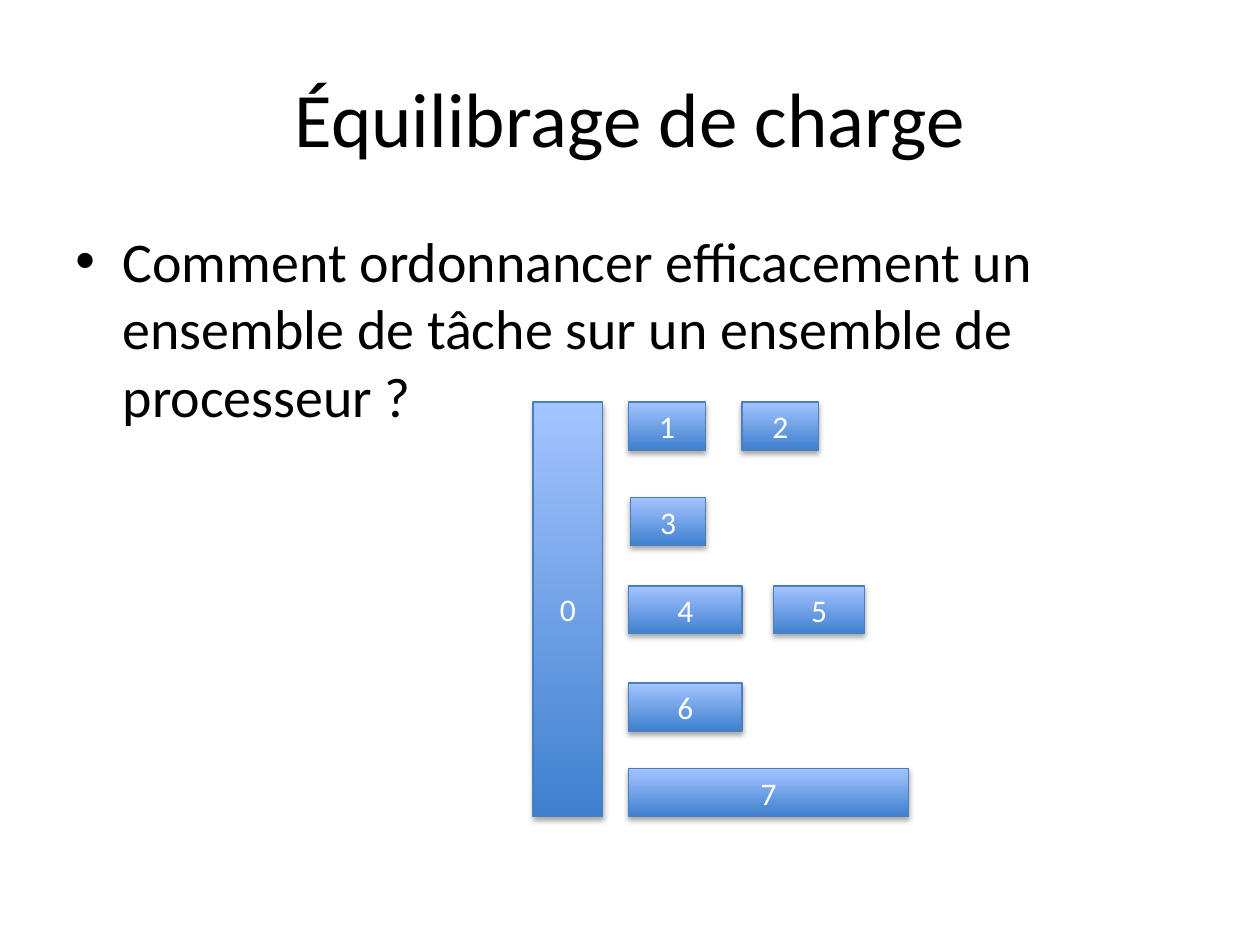
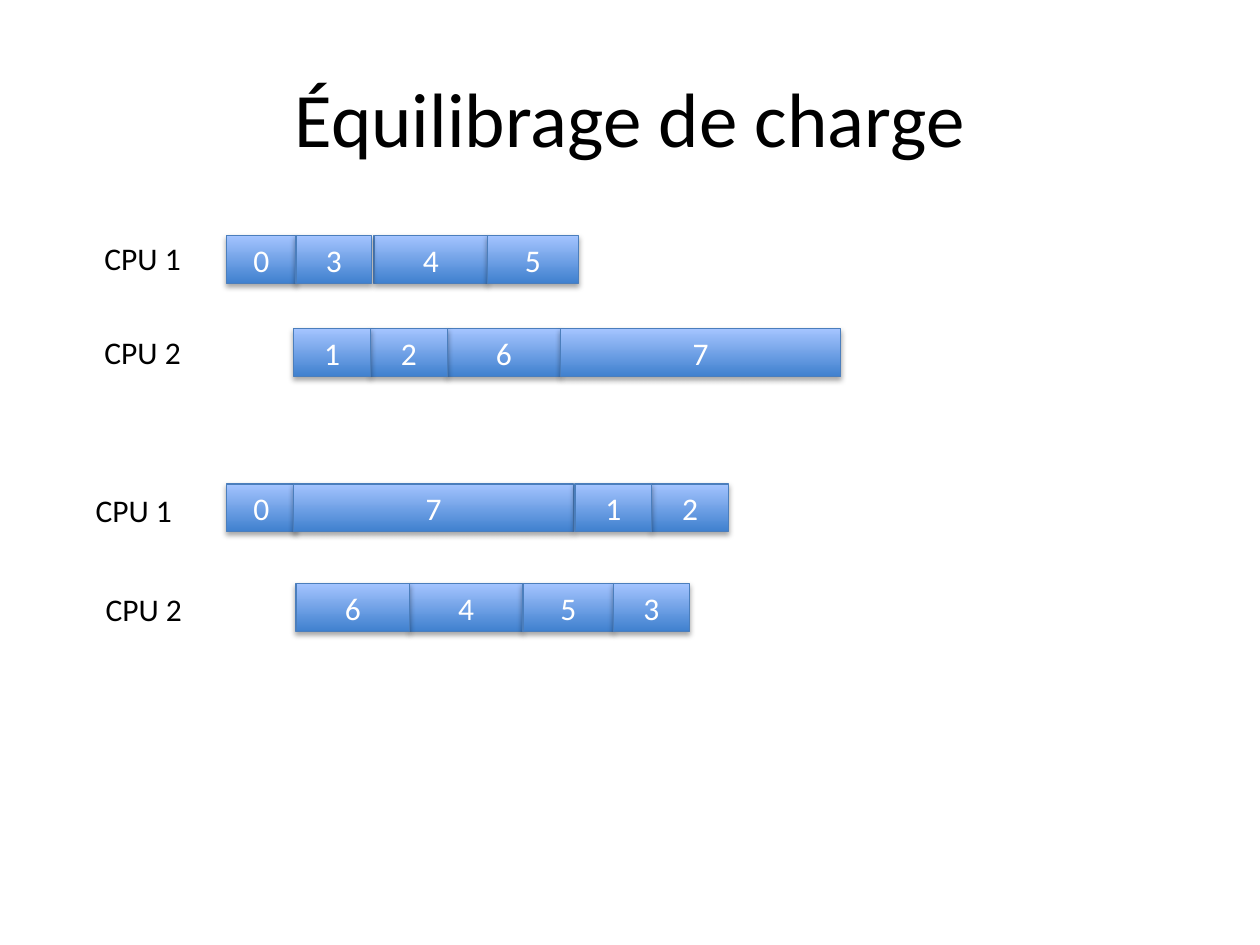
from lxml.etree import SubElement
from pptx import Presentation
from pptx.dml.color import RGBColor
from pptx.enum.shapes import MSO_SHAPE as Preset
from pptx.enum.text import MSO_ANCHOR as Anchor, MSO_AUTO_SIZE as AutoSize, PP_ALIGN as Align
from pptx.oxml.ns import qn
from pptx.util import Pt

FONT = "Calibri"
BLACK = RGBColor(0x00, 0x00, 0x00)
WHITE = RGBColor(0xFF, 0xFF, 0xFF)
TASK_DARK = RGBColor(0x3F, 0x80, 0xCE)
TASK_LIGHT = RGBColor(0xA4, 0xC4, 0xFF)
TASK_EDGE = RGBColor(0x4B, 0x7E, 0xBC)

TITLE_BOX = (36, 21.6, 648, 90)
QUESTION_BOX = (36, 126, 648, 117.36)
TASK_SET_ORIGIN = (304.6, 229.7)
TASK_HEIGHT = 27.4
LABEL_SIZE = (58.3, 29)
STACKING = "04652371"
DURATIONS = {"0": 39.6, "1": 43.9, "2": 43.9, "3": 43.2,
             "4": 64.8, "5": 51.9, "6": 64.8, "7": 160}
TASK_OFFSETS = {"0": (0, 0), "1": (54.7, 0), "2": (119.4, 0), "3": (55.6, 54.7),
                "4": (54.7, 105.1), "5": (137.5, 105.1), "6": (54.7, 160.6),
                "7": (54.7, 209.5)}

# Each lane: label, label origin, lane origin, tasks in order, gap before a task
LANES = [
    ("CPU 1", (52.6, 133.2), (129.6, 134.6), "0345", {"4": 1.4}),
    ("CPU 2", (52.6, 186.5), (167.8, 187.9), "1267", {}),
    ("CPU 1", (47.5, 277.2), (129.6, 276.5), "0712", {"7": -1.4, "1": 0.7}),
    ("CPU 2", (53.3, 333.4), (169.2, 333.4), "6453", {}),
]


def write(frame, text, size, color, align=Align.LEFT, anchor=Anchor.TOP):
    frame.text = text
    frame.vertical_anchor = anchor
    paragraph = frame.paragraphs[0]
    paragraph.alignment = align
    font = paragraph.runs[0].font
    font.name, font.size, font.color.rgb = FONT, Pt(size), color
    return paragraph


def add_text(slide, box, text, size, wrap=True, **layout):
    frame = slide.shapes.add_textbox(*map(Pt, box)).text_frame
    frame.word_wrap = wrap
    frame.auto_size = AutoSize.NONE if wrap else AutoSize.SHAPE_TO_FIT_TEXT
    return write(frame, text, size, BLACK, **layout)


def add_title(slide, box):
    add_text(slide, box, "Équilibrage de charge", 44,
             align=Align.CENTER, anchor=Anchor.MIDDLE)


def add_question(slide, box):
    question = add_text(slide, box, "Comment ordonnancer efficacement un ensemble de "
                        "tâche sur un ensemble de processeur ?", 32)
    properties = question._p.get_or_add_pPr()
    properties.set("marL", str(Pt(27)))
    properties.set("indent", str(-Pt(27)))
    spacing = SubElement(properties, qn("a:spcBef"))
    SubElement(spacing, qn("a:spcPct"), val="20000")
    SubElement(properties, qn("a:buFont"), typeface="Arial")
    SubElement(properties, qn("a:buChar"), char="•")


def add_shadow(shape):
    effects = SubElement(shape._element.spPr, qn("a:effectLst"))
    shadow = SubElement(effects, qn("a:outerShdw"), blurRad=str(Pt(3.1)),
                        dist=str(Pt(1.8)), dir="5400000", rotWithShape="0")
    color = SubElement(shadow, qn("a:srgbClr"), val=str(BLACK))
    SubElement(color, qn("a:alpha"), val="35000")


def add_task(slide, task, left, top, height=TASK_HEIGHT):
    box = (left, top, DURATIONS[task], height)
    bar = slide.shapes.add_shape(Preset.RECTANGLE, *map(Pt, box))
    bar.fill.gradient()
    bar.fill.gradient_angle = 90
    for stop, color in zip(bar.fill.gradient_stops, (TASK_DARK, TASK_LIGHT)):
        stop.color.rgb = color
    bar.line.color.rgb = TASK_EDGE
    bar.line.width = Pt(0.75)
    add_shadow(bar)
    write(bar.text_frame, task, 18, WHITE, Align.CENTER, Anchor.MIDDLE)


def add_task_set(slide, origin):
    left, top = origin
    full_height = TASK_OFFSETS["7"][1] + TASK_HEIGHT
    for task in STACKING:
        x, y = TASK_OFFSETS[task]
        add_task(slide, task, left + x, top + y,
                 full_height if task == "0" else TASK_HEIGHT)


def add_lane(slide, label, label_origin, origin, tasks, gaps):
    add_text(slide, (*label_origin, *LABEL_SIZE), label, 18, wrap=False)
    left, top = origin
    starts = {}
    for task in tasks:
        starts[task] = left + gaps.get(task, 0)
        left = starts[task] + DURATIONS[task]
    for task in sorted(tasks, key=STACKING.index):
        add_task(slide, task, starts[task], top)


def add_titled_slide(deck):
    slide = deck.slides.add_slide(deck.slide_layouts[6])
    add_title(slide, TITLE_BOX)
    return slide


def main():
    deck = Presentation()
    deck.slide_width, deck.slide_height = Pt(720), Pt(540)

    problem = add_titled_slide(deck)
    add_question(problem, QUESTION_BOX)
    add_task_set(problem, TASK_SET_ORIGIN)

    schedules = add_titled_slide(deck)
    for lane in LANES:
        add_lane(schedules, *lane)

    deck.save("out.pptx")


if __name__ == "__main__":
    main()
